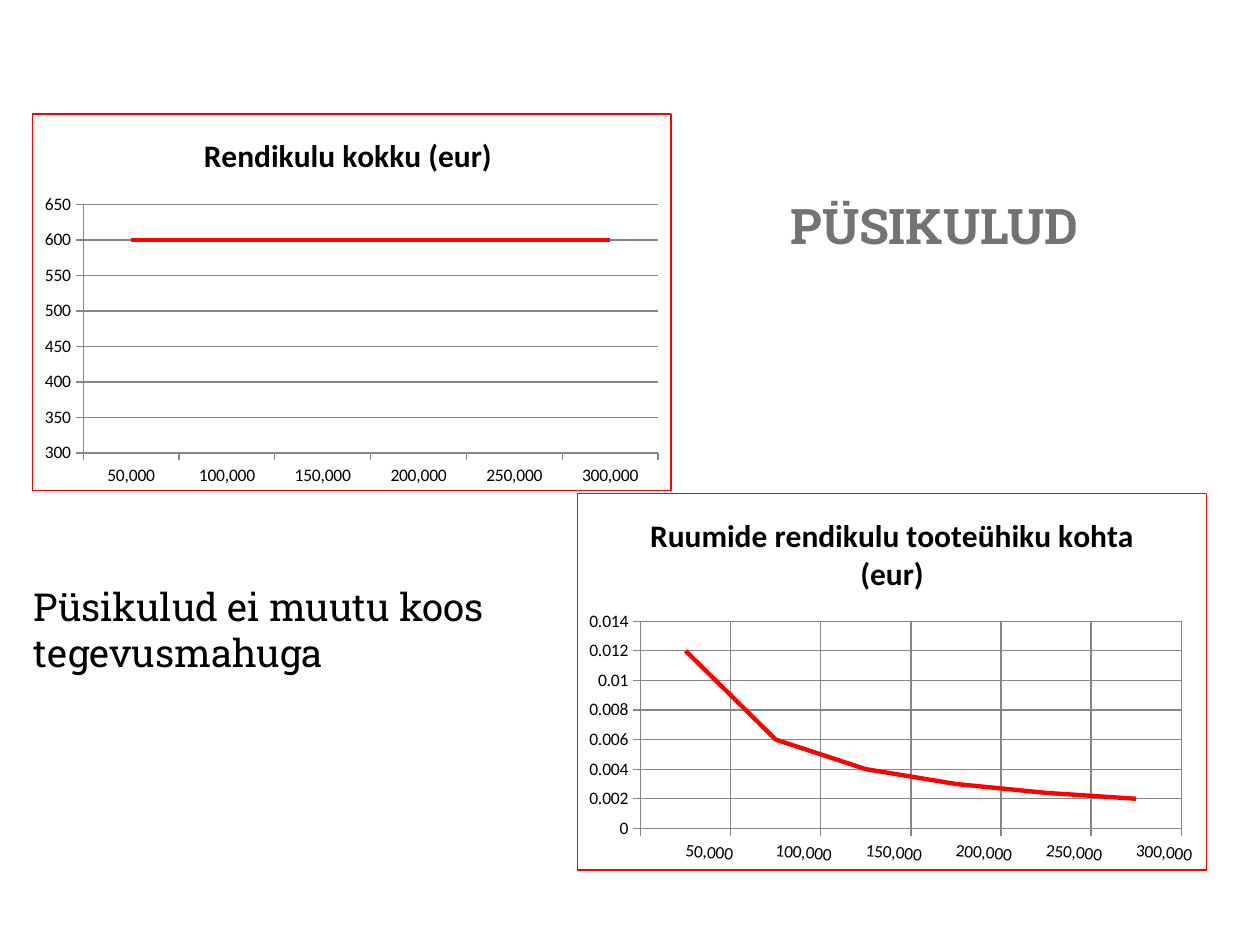
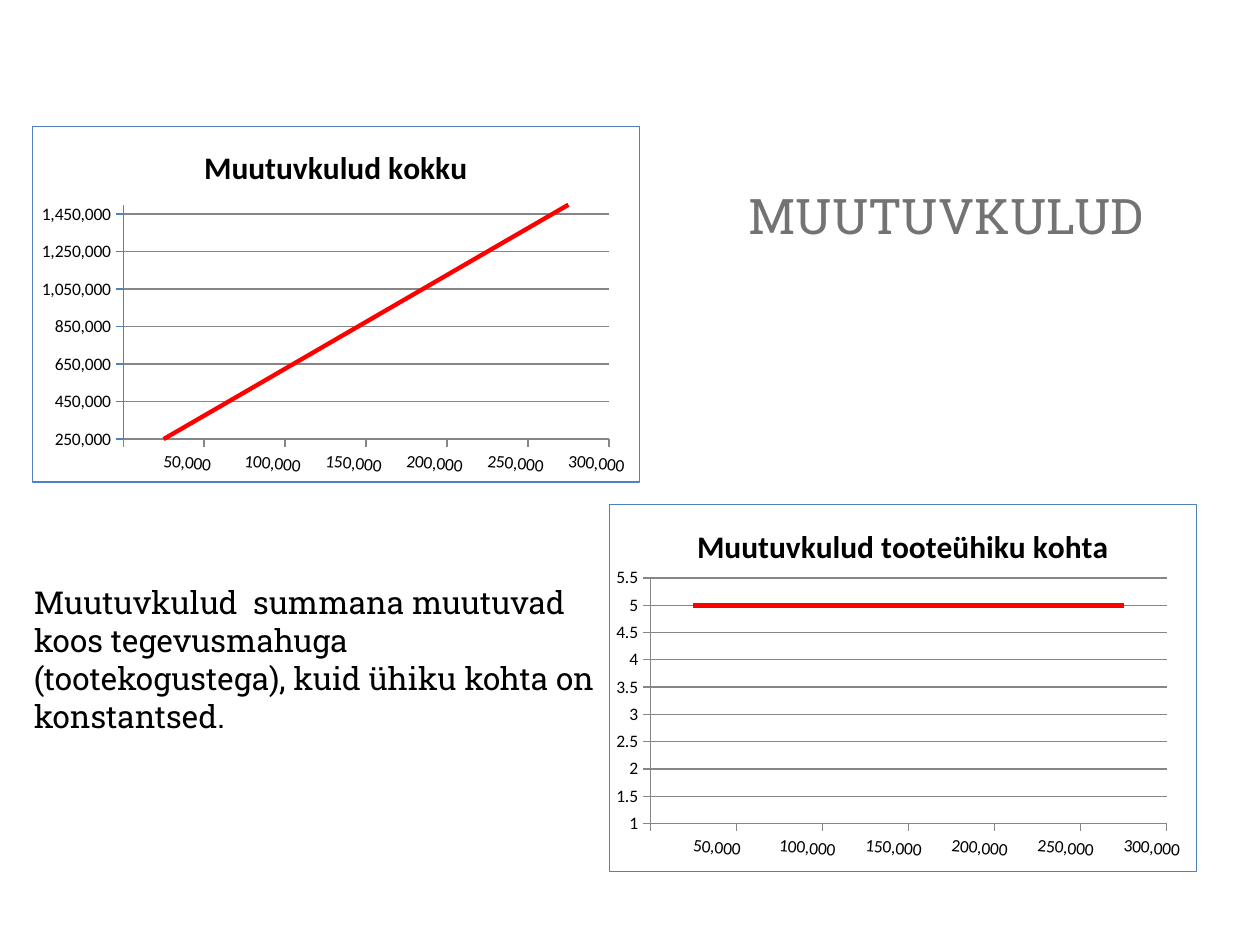
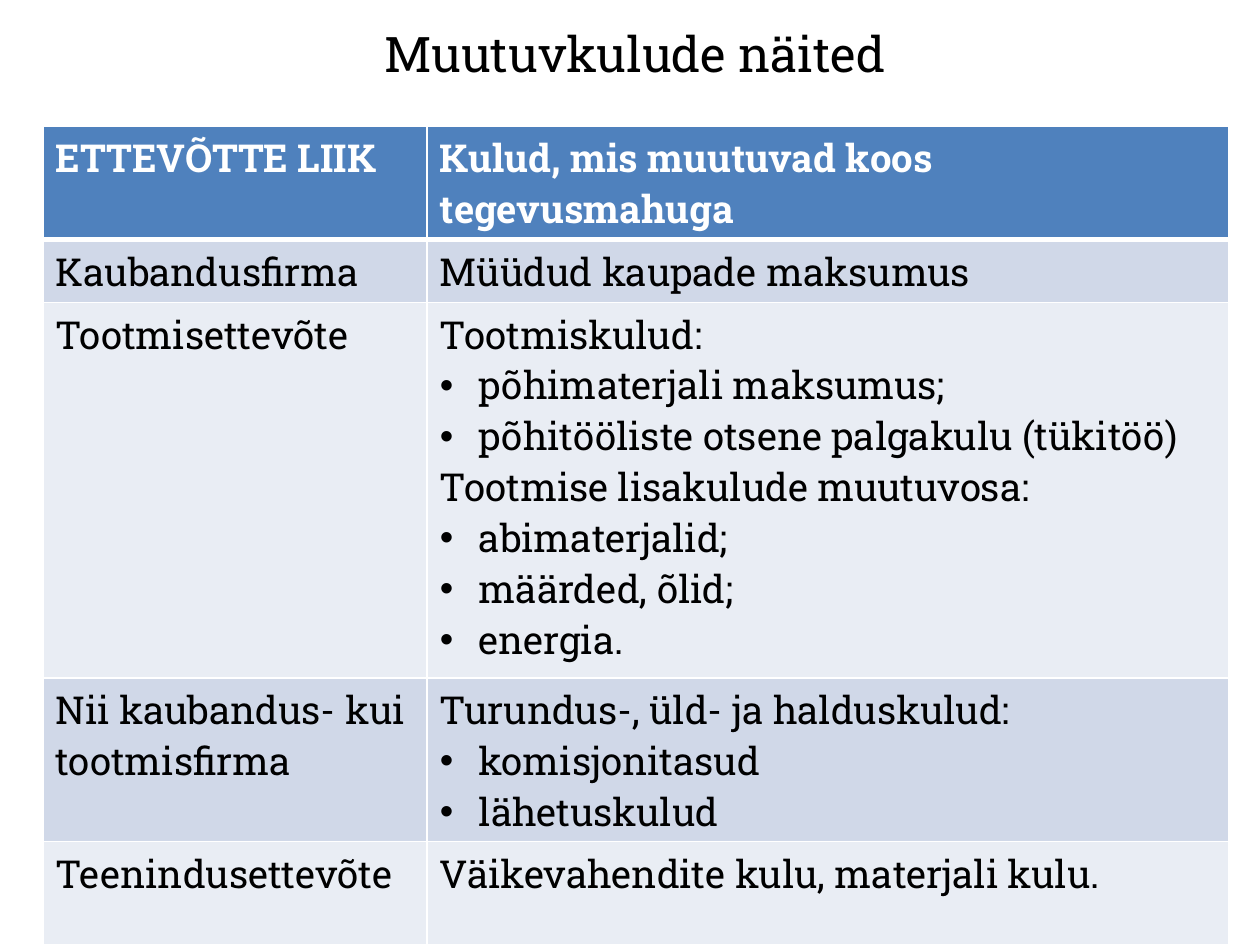
from lxml import etree
from pptx import Presentation
from pptx.chart.data import CategoryChartData
from pptx.dml.color import RGBColor
from pptx.enum.chart import XL_CHART_TYPE
from pptx.enum.text import MSO_ANCHOR, PP_ALIGN
from pptx.oxml import parse_xml
from pptx.oxml.ns import nsdecls, qn
from pptx.util import Inches, Pt

COLORS = {
    "text": "000000",
    "heading": "737373",
    "white": "FFFFFF",
    "red": "FF0000",
    "blue": "4F81BD",
    "grid": "868686",
    "band_dark": "D0D8E8",
    "band_light": "E9EDF4",
}
TEXT_FONT, CHART_FONT = "Roboto Slab", "Calibri"
VOLUMES = [50000, 100000, 150000, 200000, 250000, 300000]
HEADING = {"size": 28, "color": "heading", "align": PP_ALIGN.CENTER}
BULLET = "•"

FIXED_COST_CHARTS = [
    {"box": (0.25, 0.9, 5.08, 3), "title": "Rendikulu kokku (eur) ", "series": "Series 1",
     "values": [600] * 6, "scale": (300, 650, 50), "plot": (0.08, 0.24, 0.9, 0.66),
     "border": "red"},
    {"box": (4.58, 3.91, 5, 3), "title": "Ruumide rendikulu tooteühiku kohta (eur)",
     "values": [0.012, 0.006, 0.004, 0.003, 0.0024, 0.002], "scale": (0, 0.014, 0.002),
     "plot": (0.1, 0.34, 0.86, 0.55), "border": "red", "tilt": 5, "vertical_grid": True},
]
VARIABLE_COST_CHARTS = [
    {"box": (0.25, 1, 4.83, 2.83), "title": "Muutuvkulud kokku",
     "values": [5 * volume for volume in VOLUMES], "scale": (250000, 1500000, 200000),
     "plot": (0.15, 0.22, 0.8, 0.66), "border": "blue", "tilt": 5,
     "value_format": "#,##0", "value_line": "blue"},
    {"box": (4.83, 4, 4.67, 2.92), "title": "Muutuvkulud tooteühiku kohta",
     "series": "Series 1", "values": [5] * 6, "scale": (1, 5.5, 0.5),
     "plot": (0.07, 0.2, 0.88, 0.67), "border": "blue", "tilt": 5, "line_width": 2.75},
]
COST_ROWS = [
    (0.9, "ETTEVÕTTE LIIK", ["Kulud, mis muutuvad koos tegevusmahuga"]),
    (0.5, "Kaubandusfirma", ["Müüdud kaupade maksumus"]),
    (2.98, "Tootmisettevõte", [
        "Tootmiskulud:",
        "•põhimaterjali maksumus;",
        "•põhitööliste otsene palgakulu (tükitöö)",
        "Tootmise lisakulude muutuvosa:",
        "•abimaterjalid;",
        "•määrded, õlid;",
        "•energia."]),
    (1.3, "Nii kaubandus- kui tootmisfirma", [
        "Turundus-, üld- ja halduskulud:", "•komisjonitasud", "•lähetuskulud"]),
    (0.82, "Teenindusettevõte", ["Väikevahendite kulu, materjali kulu."]),
]


def rgb(name):
    return RGBColor.from_string(COLORS[name])


def apply(target, formats):
    for attribute, value in formats.items():
        setattr(target, attribute, value)


def style_font(font, size, color="text", bold=False, name=TEXT_FONT):
    apply(font, {"size": Pt(size), "bold": bold, "name": name})
    font.color.rgb = rgb(color)


def style_line(line, color, width=0.75):
    line.color.rgb = rgb(color)
    line.width = Pt(width)


def add_text(slide, box, text, size, color="text", bold=False, align=PP_ALIGN.LEFT,
             anchor=MSO_ANCHOR.TOP):
    frame = slide.shapes.add_textbox(*map(Inches, box)).text_frame
    apply(frame, {"word_wrap": True, "vertical_anchor": anchor})
    paragraph = frame.paragraphs[0]
    apply(paragraph, {"alignment": align, "line_spacing": 1.0})
    run = paragraph.add_run()
    run.text = text
    style_font(run.font, size, color, bold)


# Chart parts that need XML
def frame_chart(chart, border):
    chart.element.find(qn("c:chart")).addnext(parse_xml(
        f'<c:spPr {nsdecls("c", "a")}>'
        f'<a:solidFill><a:srgbClr val="{COLORS["white"]}"/></a:solidFill>'
        f'<a:ln w="{Pt(0.75)}"><a:solidFill><a:srgbClr val="{COLORS[border]}"/></a:solidFill></a:ln>'
        '</c:spPr>'))


def place_plot(chart, plot):
    area = chart.element.find(".//" + qn("c:plotArea"))
    for layout in area.findall(qn("c:layout")):
        area.remove(layout)
    places = "".join(f'<c:{key} val="{value}"/>' for key, value in zip("xywh", plot))
    area.insert(0, parse_xml(
        f'<c:layout {nsdecls("c")}><c:manualLayout><c:layoutTarget val="inner"/>'
        f'<c:xMode val="edge"/><c:yMode val="edge"/>{places}</c:manualLayout></c:layout>'))


def add_cost_chart(slide, box, title, values, scale, plot, border, series=None, tilt=0,
                   vertical_grid=False, value_format="General", value_line="grid",
                   line_width=2.5):
    data = CategoryChartData()
    data.categories = [f"{volume:,}" for volume in VOLUMES]
    data.add_series(series or title, values)
    chart = slide.shapes.add_chart(XL_CHART_TYPE.LINE, *map(Inches, box), data).chart
    chart.has_legend = False
    style_font(chart.font, 10, name=CHART_FONT)

    # Title
    chart.has_title = True
    title_frame = chart.chart_title.text_frame
    title_frame.text = title
    style_font(title_frame.paragraphs[0].runs[0].font, 18, bold=True, name=CHART_FONT)

    # Axes
    volume_axis, cost_axis = chart.category_axis, chart.value_axis
    low, high, step = scale
    apply(cost_axis, {"minimum_scale": low, "maximum_scale": high, "major_unit": step})
    axes = [(volume_axis, "#,##0", "grid", vertical_grid),
            (cost_axis, value_format, value_line, True)]
    for axis, number_format, line_color, grid in axes:
        apply(axis.tick_labels, {"number_format": number_format,
                                 "number_format_is_linked": False})
        style_font(axis.tick_labels.font, 10, name=CHART_FONT)
        style_line(axis.format.line, line_color)
        axis.has_major_gridlines = grid
        if grid:
            style_line(axis.major_gridlines.format.line, "grid")
    if tilt:
        volume_axis._element.find(".//" + qn("a:bodyPr")).set("rot", str(tilt * 60000))

    # Cost line
    cost_line = chart.plots[0].series[0]
    cost_line.smooth = False
    style_line(cost_line.format.line, "red", line_width)
    place_plot(chart, plot)
    frame_chart(chart, border)


def build_cost_slide(slide, heading, heading_box, note, note_box, note_size, charts, bold):
    add_text(slide, heading_box, heading, bold=bold, **HEADING)
    add_text(slide, note_box, note, note_size)
    for chart in charts:
        add_cost_chart(slide, **chart)


# Table cells
def set_borders(cell, top, bottom):
    properties = cell._tc.get_or_add_tcPr()
    for index, (side, width) in enumerate(zip("LRTB", (1, 1, top, bottom))):
        border = etree.Element(qn(f"a:ln{side}"), w=str(Pt(width)))
        fill = etree.SubElement(border, qn("a:solidFill"))
        etree.SubElement(fill, qn("a:srgbClr"), val=COLORS["white"])
        properties.insert(index, border)


def fill_cell(cell, lines, row):
    header = row == 0
    fill = "blue" if header else ("band_light", "band_dark")[row % 2]
    cell.fill.solid()
    cell.fill.fore_color.rgb = rgb(fill)
    set_borders(cell, 3 if row == 1 else 1, 3 if header else 1)
    frame = cell.text_frame
    for number, line in enumerate(lines):
        paragraph = frame.add_paragraph() if number else frame.paragraphs[0]
        run = paragraph.add_run()
        run.text = line.lstrip(BULLET)
        style_font(run.font, 22, "white" if header else "text", header)
        if line.startswith(BULLET):
            properties = paragraph._p.get_or_add_pPr()
            properties.set("marL", str(Inches(0.31)))
            properties.set("indent", str(Inches(-0.31)))
            etree.SubElement(properties, qn("a:buFont"), typeface="Arial")
            etree.SubElement(properties, qn("a:buChar"), char=BULLET)


def build_examples_slide(slide, heading, box):
    add_text(slide, (0.58, 0, 8.92, 0.84), heading, 28, align=PP_ALIGN.CENTER,
             anchor=MSO_ANCHOR.MIDDLE)
    table = slide.shapes.add_table(len(COST_ROWS), 2, *map(Inches, box)).table
    table.horz_banding = False
    for column, width in zip(table.columns, (3.05, box[2] - 3.05)):
        column.width = Inches(width)
    for row, (height, company, costs) in enumerate(COST_ROWS):
        table.rows[row].height = Inches(height)
        fill_cell(table.cell(row, 0), [company], row)
        fill_cell(table.cell(row, 1), costs, row)


def main():
    deck = Presentation()
    apply(deck, {"slide_width": Inches(10), "slide_height": Inches(7.5)})
    fixed, variable, examples = (deck.slides.add_slide(deck.slide_layouts[6]) for _ in range(3))
    build_cost_slide(
        fixed, "PÜSIKULUD", (6.08, 1.5, 2.67, 0.57),
        "Püsikulud ei muutu koos tegevusmahuga", (0.17, 4.58, 4, 0.84), 22,
        FIXED_COST_CHARTS, bold=True)
    build_cost_slide(
        variable, "MUUTUVKULUD", (5.78, 1.42, 3.45, 0.57),
        "Muutuvkulud  summana muutuvad koos tegevusmahuga (tootekogustega), "
        "kuid ühiku kohta on konstantsed.", (0.17, 4.58, 4.67, 1.31), 18,
        VARIABLE_COST_CHARTS, bold=False)
    build_examples_slide(examples, "Muutuvkulude näited", (0.34, 1, 9.41, 6.5))
    deck.save("out.pptx")


if __name__ == "__main__":
    main()
